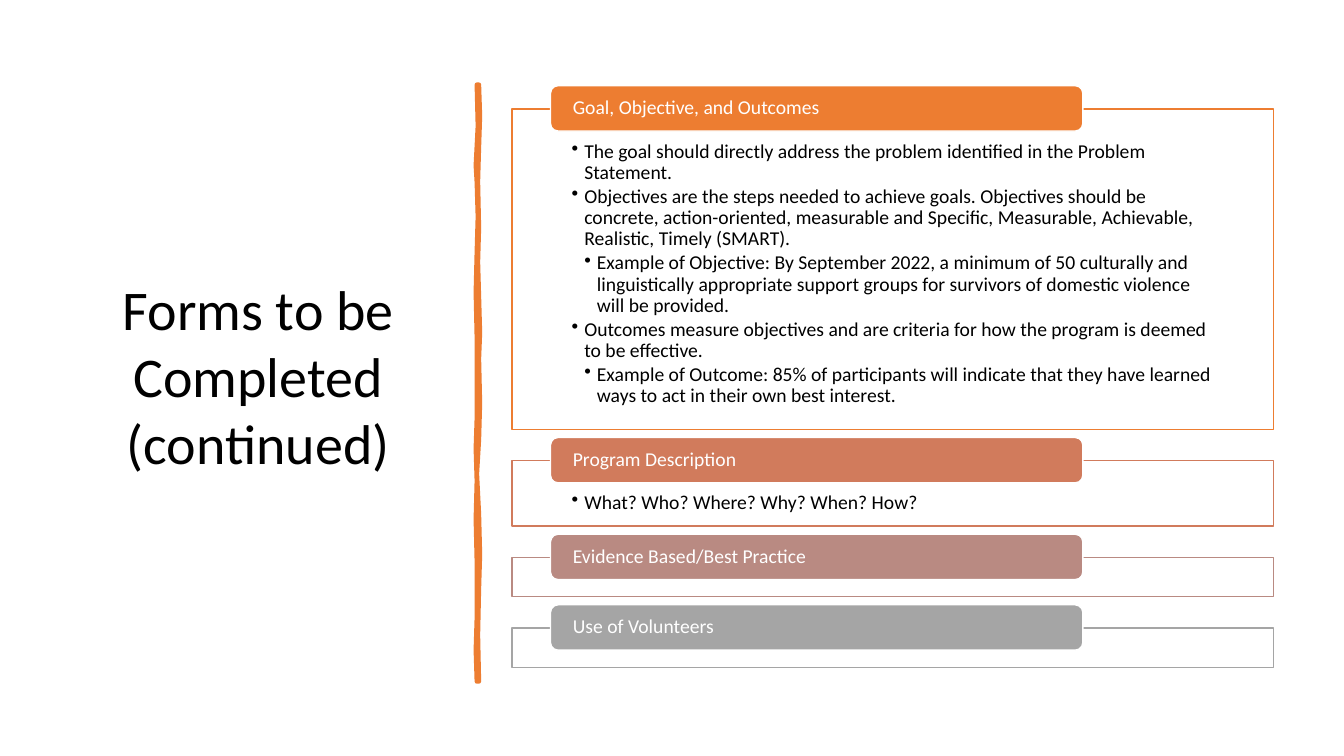
import dataclasses
import typing

import lxml.etree
import pptx
import pptx.dml.color
import pptx.enum.shapes
import pptx.enum.text
import pptx.oxml.ns
import pptx.util

Inches = pptx.util.Inches
Pt = pptx.util.Pt
Kind = pptx.enum.shapes.MSO_SHAPE
Align = pptx.enum.text.PP_ALIGN
Anchor = pptx.enum.text.MSO_ANCHOR
qn = pptx.oxml.ns.qn


@dataclasses.dataclass(frozen=True)
class Theme:
    face: str = "Calibri"
    title: float = 40
    body: float = 14
    ink: str = "000000"
    paper: str = "FFFFFF"
    accent: str = "ED7D31"
    edge: float = 1
    stroke: float = 3.25


@dataclasses.dataclass(frozen=True)
class Point:
    text: str
    level: int = 1


@dataclasses.dataclass(frozen=True)
class Panel:
    label: str
    color: str
    height: float
    points: tuple[Point, ...] = ()


THEME = Theme()

PANELS = (
    Panel("Goal, Objective, and Outcomes", THEME.accent, 3.18, (
        Point("The goal should directly address the problem identified in the "
              "Problem Statement."),
        Point("Objectives are the steps needed to achieve goals. Objectives "
              "should be concrete, action-oriented, measurable and Specific, "
              "Measurable, Achievable, Realistic, Timely (SMART)."),
        Point("Example of Objective: By September 2022, a minimum of 50 "
              "culturally and linguistically appropriate support groups for "
              "survivors of domestic violence will be provided.", 2),
        Point("Outcomes measure objectives and are criteria for how the "
              "program is deemed to be effective."),
        Point("Example of Outcome: 85% of participants will indicate that "
              "they have learned ways to act in their own best interest.", 2),
    )),
    Panel("Program Description", "D17B5C", 0.65,
          (Point("What? Who? Where? Why? When? How?"),)),
    Panel("Evidence Based/Best Practice", "B98A82", 0.39),
    Panel("Use of Volunteers", "A5A5A5", 0.39),
)

# Panel layout: each tab straddles the top edge of its box
BOX_LEFT, BOX_WIDTH = 5.08, 7.55
TAB_LEFT, TAB_WIDTH, TAB_HEIGHT = 5.46, 5.28, 0.45
FIRST_TOP, TAB_RISE, GAP = 0.85, 0.23, 0.08

# Hand-drawn bar: down the right edge, then up the left one
BAR = (
    (4.75, 0.84), (4.76, 1.15), (4.75, 1.46), (4.74, 1.8), (4.75, 2.26),
    (4.74, 2.6), (4.75, 2.94), (4.76, 3.3), (4.75, 3.56), (4.76, 4),
    (4.75, 4.36), (4.73, 4.7), (4.75, 5.1), (4.76, 5.5), (4.75, 5.84),
    (4.74, 6.3), (4.75, 6.76), (4.73, 6.76), (4.72, 6.45), (4.73, 6.13),
    (4.73, 5.57), (4.72, 5.15), (4.73, 4.77), (4.72, 4.45), (4.73, 4.15),
    (4.73, 3.75), (4.73, 3.35), (4.72, 2.9), (4.73, 2.5), (4.74, 2.15),
    (4.73, 1.81), (4.72, 1.64), (4.74, 1.25), (4.73, 0.84),
)


def rgb(color: str) -> pptx.dml.color.RGBColor:
    return pptx.dml.color.RGBColor.from_string(color)


def paint(shape: typing.Any, fill: str, line: str, width: float) -> None:
    shape.shadow.inherit = False
    shape.fill.solid()
    shape.fill.fore_color.rgb = rgb(fill)
    shape.line.color.rgb = rgb(line)
    shape.line.width = Pt(width)


def frame(shape: typing.Any, sides: float, top: float, base: float,
          anchor: typing.Any) -> typing.Any:
    text = shape.text_frame
    text.word_wrap = True
    text.margin_left = text.margin_right = Inches(sides)
    text.margin_top, text.margin_bottom = Inches(top), Inches(base)
    text.vertical_anchor = anchor
    return text


def style(para: typing.Any, size: float, color: str, align: typing.Any,
          pitch: float = 1) -> None:
    para.alignment = align
    para.line_spacing = pitch
    para.font.name = THEME.face
    para.font.size = Pt(size)
    para.font.color.rgb = rgb(color)


def bullet(para: typing.Any, level: int) -> None:
    para.level = level
    props = para._p.get_or_add_pPr()
    props.set("marL", str(Inches(0.125 * level)))
    props.set("indent", str(Inches(-0.125)))
    lxml.etree.SubElement(props, qn("a:buChar"), char="•")


def draw_box(slide: typing.Any, panel: Panel, top: float) -> None:
    box = slide.shapes.add_shape(
        Kind.RECTANGLE, Inches(BOX_LEFT), Inches(top),
        Inches(BOX_WIDTH), Inches(panel.height))
    paint(box, THEME.paper, panel.color, THEME.edge)
    # Ninety percent opaque fill
    tint = box._element.spPr.find(qn("a:solidFill"))[0]
    lxml.etree.SubElement(tint, qn("a:alpha"), val="90000")
    if not panel.points:
        return
    text = frame(box, 0.59, 0.32, 0.11, Anchor.TOP)
    for index, point in enumerate(panel.points):
        para = text.add_paragraph() if index else text.paragraphs[0]
        para.text = point.text
        bullet(para, point.level)
        style(para, THEME.body, THEME.ink, Align.LEFT, 0.9)
        para.space_after = Pt(0.15 * THEME.body)


def draw_tab(slide: typing.Any, panel: Panel, top: float) -> None:
    tab = slide.shapes.add_shape(
        Kind.ROUNDED_RECTANGLE, Inches(TAB_LEFT), Inches(top),
        Inches(TAB_WIDTH), Inches(TAB_HEIGHT))
    paint(tab, panel.color, THEME.paper, THEME.edge)
    para = frame(tab, 0.2, 0, 0, Anchor.MIDDLE).paragraphs[0]
    para.text = panel.label
    style(para, THEME.body, THEME.paper, Align.LEFT, 0.9)


def draw_bar(slide: typing.Any) -> None:
    dots = [(Inches(x), Inches(y)) for x, y in BAR]
    path = slide.shapes.build_freeform(*dots[0])
    path.add_line_segments(dots[1:], close=True)
    paint(path.convert_to_shape(), THEME.accent, THEME.accent, THEME.stroke)


def draw_title(slide: typing.Any) -> None:
    box = slide.shapes.add_textbox(
        Inches(0.7), Inches(2.67), Inches(3.72), Inches(2.12))
    para = frame(box, 0.1, 0.05, 0.05, Anchor.TOP).paragraphs[0]
    para.text = "Forms to be Completed (continued)"
    style(para, THEME.title, THEME.ink, Align.CENTER)


def main() -> None:
    deck = pptx.Presentation()
    deck.slide_width, deck.slide_height = Inches(13.33), Inches(7.5)
    slide = deck.slides.add_slide(deck.slide_layouts[6])
    draw_bar(slide)
    # Stack the panels downwards
    top = FIRST_TOP
    for panel in PANELS:
        draw_box(slide, panel, top + TAB_RISE)
        draw_tab(slide, panel, top)
        top += TAB_RISE + panel.height + GAP
    draw_title(slide)
    deck.save("out.pptx")


if __name__ == "__main__":
    main()
